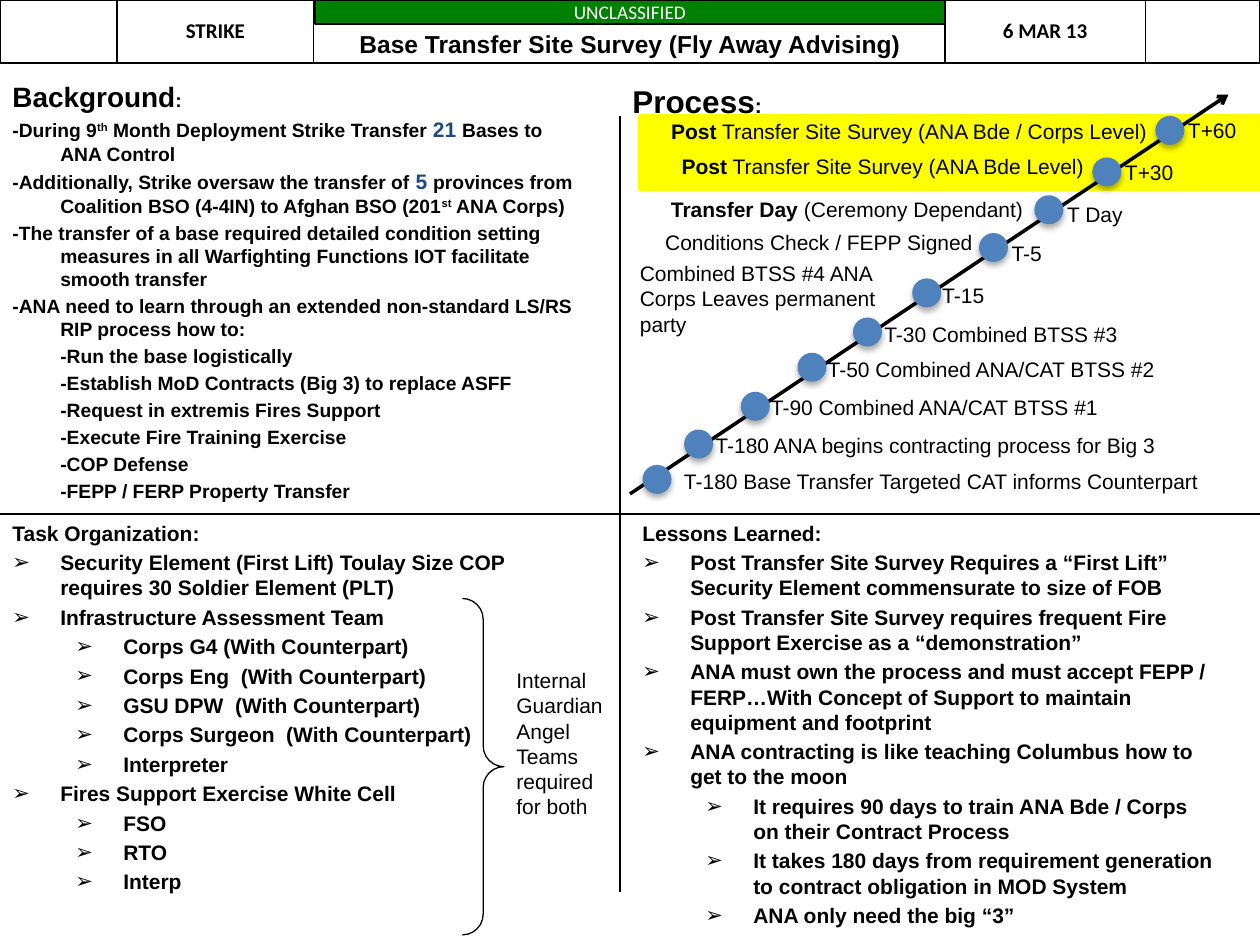
from pptx import Presentation
from pptx.dml.color import RGBColor
from pptx.enum.shapes import MSO_CONNECTOR, MSO_SHAPE
from pptx.enum.text import MSO_ANCHOR, MSO_AUTO_SIZE, PP_ALIGN
from pptx.oxml import parse_xml
from pptx.oxml.ns import nsdecls
from pptx.util import Inches, Pt

BLACK, WHITE = RGBColor(0, 0, 0), RGBColor(255, 255, 255)
GREEN, YELLOW = RGBColor(0, 0x80, 0), RGBColor(255, 255, 0)
BLUE, NAVY = RGBColor(0x4F, 0x81, 0xBD), RGBColor(0x1F, 0x49, 0x7D)
LEFT, MID, RIGHT = PP_ALIGN.LEFT, PP_ALIGN.CENTER, PP_ALIGN.RIGHT
NS = nsdecls("a")

# Content: a run is plain text or (text, changes)
TITLE = "Base Transfer Site Survey (Fly Away Advising)"
HEADER = [("", 0.93), ("STRIKE", 1.56), ("", 5.01), ("6 MAR 13", 1.59), ("", 0.91)]
BIG = {"size": 12, "color": NAVY}
SUP = {"base": 30000}
BACKGROUND = [
    [("Background", {"size": 16}), ":"],
    ["-During 9", ("th", SUP), " Month Deployment Strike Transfer ",
     ("21 ", BIG), "Bases to ANA Control"],
    ["-Additionally, Strike oversaw the transfer of ", ("5 ", BIG),
     "provinces from Coalition BSO (4-4IN) to Afghan BSO (201",
     ("st", SUP), " ANA Corps)"],
    ["-The transfer of a base required detailed condition setting measures "
     "in all Warfighting Functions IOT facilitate smooth transfer"],
    ["-ANA need to learn through an extended non-standard LS/RS RIP process how to:"],
    ["\t-Run the base logistically"],
    ["\t-Establish MoD Contracts (Big 3) to replace ASFF"],
    ["\t-Request in extremis Fires Support"],
    ["\t-Execute Fire Training Exercise"],
    ["\t-COP Defense"],
    ["\t-FEPP / FERP Property Transfer"],
]
# Bullet lists: heading, then (level, text)
TASKS = ("Task Organization:", [
    (0, "Security Element (First Lift) Toulay Size COP requires 30 Soldier Element (PLT)"),
    (0, "Infrastructure Assessment Team"),
    (1, "Corps G4 (With Counterpart)"),
    (1, "Corps Eng  (With Counterpart)"),
    (1, "GSU DPW  (With Counterpart)"),
    (1, "Corps Surgeon  (With Counterpart)"),
    (1, "Interpreter"),
    (0, "Fires Support Exercise White Cell"),
    (1, "FSO"),
    (1, "RTO"),
    (1, "Interp"),
])
LESSONS = ("Lessons Learned:", [
    (0, "Post Transfer Site Survey Requires a “First Lift” Security Element "
        "commensurate to size of FOB"),
    (0, "Post Transfer Site Survey requires frequent Fire Support Exercise "
        "as a “demonstration”"),
    (0, "ANA must own the process and must accept FEPP / FERP…With Concept "
        "of Support to maintain equipment and footprint"),
    (0, "ANA contracting is like teaching Columbus how to get to the moon"),
    (1, "It requires 90 days to train ANA Bde / Corps on their Contract Process"),
    (1, "It takes 180 days from requirement generation to contract obligation in MOD System"),
    (1, "ANA only need the big “3”"),
])
# Steps: dot left, dot top, label left, label top, label width, label
STEPS = [
    (5.1, 3.69, 5.33, 3.67, 4.32, "T-180 Base Transfer Targeted CAT informs Counterpart"),
    (5.43, 3.41, 5.58, 3.38, 3.72, "T-180 ANA begins contracting process for Big 3"),
    (5.88, 3.11, 6.02, 3.08, 2.82, "T-90 Combined ANA/CAT BTSS #1"),
    (6.33, 2.8, 6.47, 2.78, 2.82, "T-50 Combined ANA/CAT BTSS #2"),
    (6.77, 2.52, 6.92, 2.5, 2.07, "T-30 Combined BTSS #3"),
    (7.24, 2.21, 7.38, 2.19, 0.54, "T-15"),
    (7.77, 1.85, 7.93, 1.86, 0.45, "T-5"),
    (8.21, 1.55, 8.37, 1.55, 0.65, "T Day"),
    (8.67, 1.25, 8.83, 1.22, 0.59, "T+30"),
    (9.17, 0.92, 9.33, 0.88, 0.59, "T+60"),
]
BOLD = {"bold": True}
# Notes beside the dots: box, alignment, runs
NOTES = [
    ((4.98, 2.02, 2.42, 0.71), LEFT, ["Combined BTSS #4 ANA Corps Leaves permanent party"]),
    ((4.57, 1.77, 3.25, 0.3), RIGHT, ["Conditions Check / FEPP Signed"]),
    ((4.8, 1.51, 3.42, 0.3), RIGHT, [("Transfer Day ", BOLD), "(Ceremony Dependant)"]),
    ((4.92, 1.17, 3.83, 0.3), RIGHT,
     [("Post", BOLD), " Transfer Site Survey (ANA Bde Level) "]),
    ((4.83, 0.89, 4.42, 0.3), RIGHT,
     [("Post", BOLD), " Transfer Site Survey (ANA Bde / Corps Level) "]),
    ((4, 5.25, 0.92, 1.31), LEFT, ["Internal Guardian Angel Teams required for both"]),
]

prs = Presentation()
prs.slide_width, prs.slide_height = Inches(10), Inches(7.5)
slide = prs.slides.add_slide(prs.slide_layouts[5])
shapes = slide.shapes


def place(box):
    return [Inches(v) for v in box]


def write(para, runs, size=12, bold=False, color=BLACK, face="Arial"):
    for item in runs:
        text, diff = (item, {}) if isinstance(item, str) else item
        run = para.add_run()
        run.text = text
        font = run.font
        font.name = face
        font.size = Pt(diff.get("size", size))
        font.bold = diff.get("bold", bold)
        font.color.rgb = diff.get("color", color)
        if "base" in diff:
            font._element.set("baseline", str(diff["base"]))


def hang(para, level=0, mark=False):
    props = para._p.get_or_add_pPr()
    props.set("marL", str(Inches(0.38 + 0.5 * level)))
    props.set("indent", str(Inches(-0.38)))
    if mark:
        para.level = level
        props.append(parse_xml(f'<a:buFont {NS} typeface="Arial"/>'))
        props.append(parse_xml(f'<a:buChar {NS} char="➢"/>'))


def add_text(box, paras, size=12, bold=False, align=LEFT, wrap=True, hung=False):
    """Each para is (level, mark, runs)."""
    frame = shapes.add_textbox(*place(box)).text_frame
    frame.word_wrap = wrap
    for i, (level, mark, runs) in enumerate(paras):
        para = frame.add_paragraph() if i else frame.paragraphs[0]
        if hung:
            hang(para, level, mark)
        if i:
            para.space_before = Pt(size * 0.2)
        para.alignment = align
        write(para, runs, size, bold)


def add_form(kind, box, fill=None, line=None, width=1):
    form = shapes.add_shape(kind, *place(box))
    form.shadow.inherit = False
    if fill is None:
        form.fill.background()
    else:
        form.fill.solid()
        form.fill.fore_color.rgb = fill
    if line is None:
        form.line.fill.background()
    else:
        form.line.color.rgb = line
        form.line.width = Pt(width)
    return form


def add_line(ends, width=0.75):
    line = shapes.add_connector(MSO_CONNECTOR.STRAIGHT, *place(ends))
    line.line.color.rgb = BLACK
    line.line.width = Pt(width)
    line._element.spPr.append(parse_xml(f"<a:effectLst {NS}/>"))
    return line


# Header table
frame = shapes.add_table(1, len(HEADER), *place((0, 0, 10, 0.5)))
table = frame.table
table.first_row = table.horz_banding = False
table.rows[0].height = Inches(0.5)
for i, (text, width) in enumerate(HEADER):
    table.columns[i].width = Inches(width)
    cell = table.cell(0, i)
    cell.vertical_anchor = MSO_ANCHOR.MIDDLE
    cell.fill.solid()
    cell.fill.fore_color.rgb = WHITE
    for n, side in enumerate("LRTB"):
        cell._tc.get_or_add_tcPr().insert(n, parse_xml(
            f'<a:ln{side} {NS} w="{Pt(1)}"><a:solidFill><a:srgbClr val="{BLACK}"/>'
            f"</a:solidFill></a:ln{side}>"))
    if text:
        para = cell.text_frame.paragraphs[0]
        para.alignment = MID
        write(para, [text], bold=True, face="Calibri")

# Marking band and title
band = add_form(MSO_SHAPE.RECTANGLE, (2.5, 0, 5, 0.19), GREEN, BLACK).text_frame
band.margin_left = band.margin_right = band.margin_top = band.margin_bottom = 0
band.vertical_anchor = MSO_ANCHOR.MIDDLE
band.paragraphs[0].alignment = MID
write(band.paragraphs[0], ["UNCLASSIFIED"], 11, color=WHITE, face="Calibri")

title = shapes.title
title.left, title.top, title.width, title.height = place((2.5, 0.18, 5, 0.34))
head = title.text_frame
head.auto_size = MSO_AUTO_SIZE.NONE
head.vertical_anchor = MSO_ANCHOR.TOP
head.paragraphs[0].alignment = MID
write(head.paragraphs[0], [TITLE], 14, True)
frame._element.getparent().append(title._element)  # above the table

# Quadrants
add_form(MSO_SHAPE.RECTANGLE, (5.08, 0.92, 4.92, 0.58), YELLOW, YELLOW, 2)
add_line((4.92, 0.92, 4.92, 7.08))
add_line((0, 4.08, 10, 4.08))
add_text((0, 0.58, 4.75, 3.42), [(0, False, runs) for runs in BACKGROUND],
         11, True, hung=True)
for left, (name, items) in ((0, TASKS), (5, LESSONS)):
    paras = [(0, False, [name])] + [(lev, True, [text]) for lev, text in items]
    add_text((left, 4.08, 4.75, 3.17), paras, bold=True, hung=True)
brace = add_form(MSO_SHAPE.RIGHT_BRACE, (3.67, 4.75, 0.33, 2.67), None, BLACK, 0.75)
brace.adjustments[0] = brace.adjustments[1] = 0.5

# Process timeline
add_text((4.92, 0.6, 1.24, 0.4), [(0, False, [("Process", {"size": 18}), ":"])],
         bold=True, wrap=False, hung=True)
arrow = add_line((5, 3.92, 9.75, 0.75), 2)
arrow.line._get_or_add_ln().append(parse_xml(f'<a:tailEnd {NS} type="arrow"/>'))
for x, y, left, top, width, label in STEPS:
    dot = add_form(MSO_SHAPE.OVAL, (x, y, 0.23, 0.23), BLUE)
    dot._element.spPr.find(".//{*}effectLst").append(parse_xml(
        f'<a:outerShdw {NS} blurRad="{Pt(3.5)}" dist="{Pt(2.2)}" dir="5400000" '
        f'rotWithShape="0"><a:srgbClr val="{BLACK}"><a:alpha val="32000"/>'
        "</a:srgbClr></a:outerShdw>"))
    add_text((left, top, width, 0.3), [(0, False, [label])], wrap=False)
for box, align, runs in NOTES:
    add_text(box, [(0, False, runs)], align=align)

prs.save("out.pptx")
